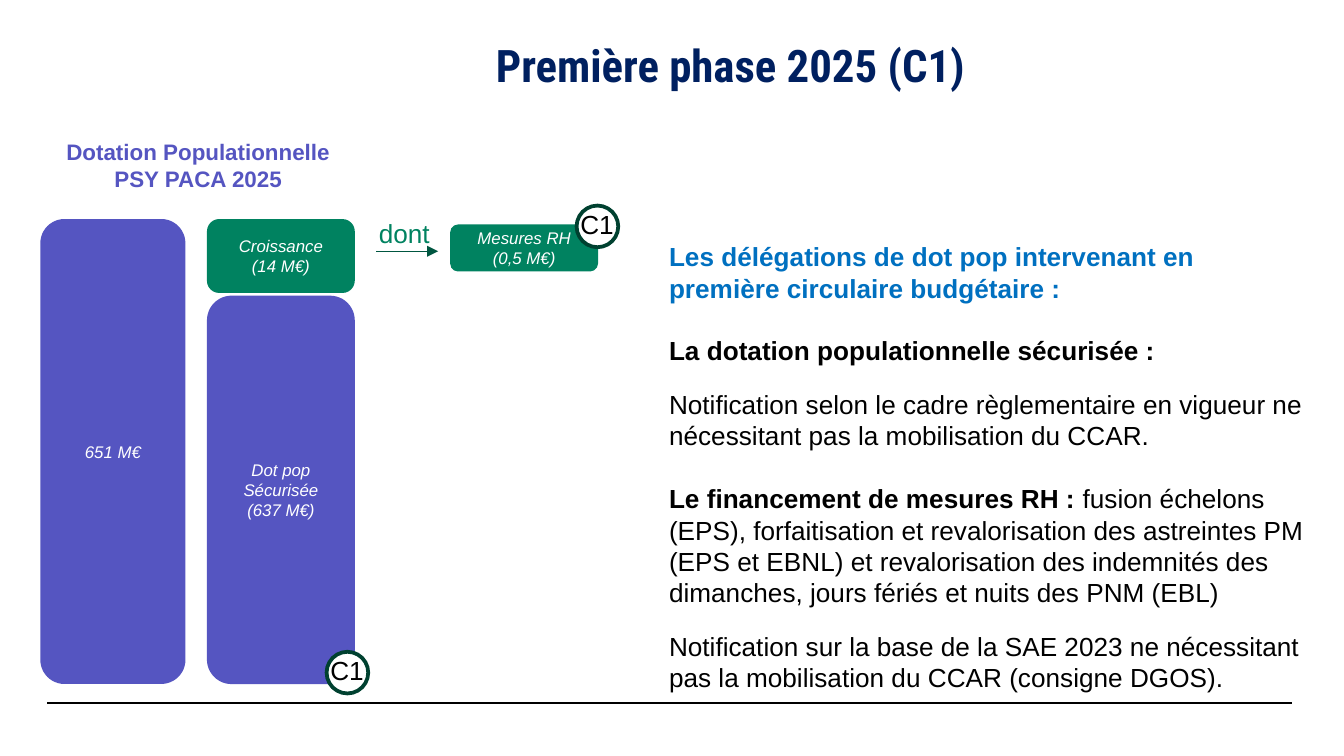
"""Slide on the first 2025 budget phase (C1) of the PSY PACA population grant."""
from lxml import etree
from pptx import Presentation
from pptx.dml.color import RGBColor
from pptx.enum import shapes, text
from pptx.oxml import ns
from pptx.util import Inches, Pt

VIOLET = RGBColor(0x55, 0x55, 0xC1)
GREEN = RGBColor(0x00, 0x82, 0x60)
ARROW_GREEN = RGBColor(0x00, 0x56, 0x40)
DARK_GREEN = RGBColor(0x00, 0x41, 0x30)
NAVY = RGBColor(0x00, 0x20, 0x60)
BLUE = RGBColor(0x00, 0x70, 0xC0)
BLACK = RGBColor(0, 0, 0)
WHITE = RGBColor(255, 255, 255)

TITLE = "Première phase 2025 (C1)"
HEADING = "Dotation Populationnelle PSY PACA 2025"
FOOTER_STARTS = [0.35, 0.39]
BLOCKS = [
    ((0.3, 1.63, 1.08, 3.46), VIOLET, ["651 M€"]),
    ((1.54, 2.2, 1.1, 2.89), VIOLET, ["Dot pop", "Sécurisée", "(637 M€)"]),
    ((1.54, 1.63, 1.1, 0.55), GREEN, ["Croissance", "(14 M€)"]),
    ((3.35, 1.67, 1.1, 0.35), GREEN, ["Mesures RH (0,5 M€)"]),
]
BADGES = [(2.43, 4.85), (4.29, 1.53)]
BODY = [
    (0, [("Les délégations de dot pop intervenant en première circulaire budgétaire :", BLUE, True)]),
    (16.8, [("La dotation populationnelle sécurisée :", BLACK, True)]),
    (12, [("Notification selon le cadre règlementaire en vigueur ne nécessitant pas "
           "la mobilisation du CCAR.", BLACK, False)]),
    (16.8, [("Le financement de mesures RH : ", BLACK, True),
            ("fusion échelons (EPS), forfaitisation et revalorisation des astreintes PM "
             "(EPS et EBNL) et revalorisation des indemnités des dimanches, jours fériés "
             "et nuits des PNM (EBL)", BLACK, False)]),
    (12, [("Notification sur la base de la SAE 2023 ne nécessitant pas la mobilisation "
           "du CCAR (consigne DGOS).", BLACK, False)]),
]


def add_run(p, words, size, color, bold=False, italic=False, name="Arial"):
    r = p.add_run()
    r.text = words
    r.font.size, r.font.name = Pt(size), name
    r.font.bold, r.font.italic = bold, italic
    r.font.color.rgb = color


def add_text(s, box, margin=None, grow=True):
    tf = s.shapes.add_textbox(*map(Inches, box)).text_frame
    tf.word_wrap = True
    if grow:
        tf.auto_size = text.MSO_AUTO_SIZE.SHAPE_TO_FIT_TEXT
    if margin is not None:
        tf.margin_left = tf.margin_right = tf.margin_top = tf.margin_bottom = Inches(margin)
    return tf


def add_shape(s, kind, box, fill):
    sp = s.shapes.add_shape(kind, *map(Inches, box))
    sp.shadow.inherit = False
    sp.fill.solid()
    sp.fill.fore_color.rgb = fill
    sp.line.fill.background()
    return sp


def add_block(s, box, fill, lines):
    tf = add_shape(s, shapes.MSO_SHAPE.ROUNDED_RECTANGLE, box, fill).text_frame
    tf.vertical_anchor = text.MSO_ANCHOR.MIDDLE
    for i, line in enumerate(lines):
        p = tf.add_paragraph() if i else tf.paragraphs[0]
        p.alignment = text.PP_ALIGN.CENTER
        add_run(p, line, 9, WHITE, italic=True)


def add_line(s, x1, x2, y, color, width):
    line = s.shapes.add_connector(shapes.MSO_CONNECTOR.STRAIGHT, *map(Inches, (x1, y, x2, y)))
    line.line.color.rgb = color
    line.line.width = Pt(width)
    etree.SubElement(line._element.spPr, ns.qn("a:effectLst"))
    return line


def add_badge(s, x, y):
    sp = add_shape(s, shapes.MSO_SHAPE.OVAL, (x, y, 0.31, 0.31), WHITE)
    sp.line.color.rgb = DARK_GREEN
    sp.line.width = Pt(2)
    tf = add_text(s, (x - 0.07, y - 0.03, 0.47, 0.34))
    add_run(tf.paragraphs[0], "C1", 14, BLACK)


def main():
    prs = Presentation()
    prs.slide_width = Inches(10)
    prs.slide_height = prs.slide_width * 9 // 16
    s = prs.slides.add_slide(prs.slide_layouts[6])

    for x in FOOTER_STARTS:
        add_line(s, x, x + 9.22, 5.23, BLACK, 0.8)

    p = add_text(s, (1.22, 0.14, 8.43, 0.87), 0.1, grow=False).paragraphs[0]
    p.alignment = text.PP_ALIGN.CENTER
    p.line_spacing = 1.1
    add_run(p, TITLE, 24, NAVY, bold=True, name="Roboto Condensed")

    p = add_text(s, (0.31, 1.03, 2.33, 0.4), 0).paragraphs[0]
    p.alignment = text.PP_ALIGN.CENTER
    add_run(p, HEADING, 12, VIOLET, bold=True)

    for block in BLOCKS:
        add_block(s, *block)

    arrow = add_line(s, 2.8, 3.26, 1.87, ARROW_GREEN, 0.75)
    etree.SubElement(arrow.line._get_or_add_ln(), ns.qn("a:tailEnd"), type="triangle")
    add_run(add_text(s, (2.72, 1.57, 0.61, 0.34)).paragraphs[0], "dont", 14, GREEN)

    for x, y in BADGES:
        add_badge(s, x, y)

    tf = add_text(s, (4.88, 1.69, 4.94, 3.6), 0.1)
    for i, (gap, runs) in enumerate(BODY):
        p = tf.add_paragraph() if i else tf.paragraphs[0]
        if gap:
            p.space_before = Pt(gap)
        for words, color, bold in runs:
            add_run(p, words, 14, color, bold)

    prs.save("out.pptx")


if __name__ == "__main__":
    main()
